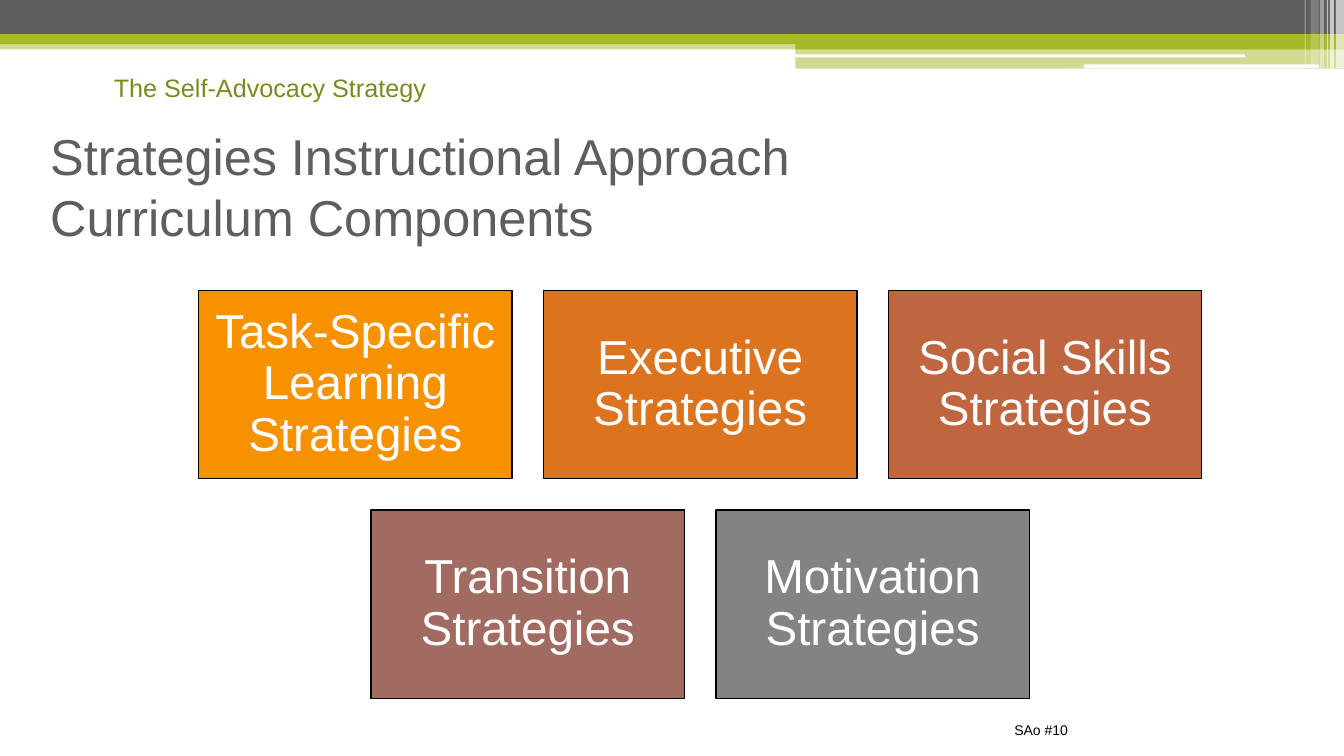
from dataclasses import dataclass

from lxml import etree
from pptx import Presentation
from pptx import util as u
from pptx.dml.color import RGBColor
from pptx.enum import shapes, text
from pptx.oxml.ns import qn

WIDE, HIGH = 13.33, 7.5


@dataclass(frozen=True)
class Theme:
    """Colours, type sizes and font of the deck."""
    font: str = "Arial"
    white: str = "FFFFFF"
    black: str = "000000"
    gray: str = "5E5E5E"
    lime: str = "A6B727"
    olive: str = "7D891D"
    cards: tuple = ("F69200", "DB731F", "BF6540", "A16B62", "838383")
    tag: int = 18
    title: int = 36
    card: int = 34
    note: int = 10


T = Theme()
FORM = shapes.MSO_SHAPE
ALIGN = text.PP_ALIGN
ANCHOR = text.MSO_ANCHOR


def place(box):
    """Turn a box in percent of the slide into lengths."""
    x, y, w, h = box
    return [u.Inches(v * side / 100)
            for v, side in ((x, WIDE), (y, HIGH), (w, WIDE), (h, HIGH))]


def inner(box, part):
    """Shift a part by the corner of the box that holds it."""
    return box[0] + part[0], box[1] + part[1], part[2], part[3]


def block(slide, box, fill, alpha=100, form=FORM.RECTANGLE, edge=None):
    """Draw a filled shape, with an optional edge and transparency."""
    shape = slide.shapes.add_shape(form, *place(box))
    shape.shadow.inherit = False
    shape.fill.solid()
    shape.fill.fore_color.rgb = RGBColor.from_string(fill)
    if alpha < 100:
        color = shape.fill._xPr.find(qn("a:solidFill"))[0]
        etree.SubElement(color, qn("a:alpha"), val=str(alpha * 1000))
    if edge:
        shape.line.color.rgb = RGBColor.from_string(edge)
        shape.line.width = u.Pt(1)
    else:
        shape.line.fill.background()
    return shape


def write(shape, words, size, color, align=ALIGN.LEFT, anchor=ANCHOR.TOP,
          wrap=True, pad=None, lead=None):
    """Put formatted words into a shape."""
    frame = shape.text_frame
    frame.word_wrap = wrap
    frame.vertical_anchor = anchor
    if pad is not None:
        frame.margin_left = frame.margin_right = u.Inches(pad)
        frame.margin_top = frame.margin_bottom = u.Inches(pad)
    para = frame.paragraphs[0]
    para.text = words
    para.alignment = align
    if lead:
        para.line_spacing = lead
    for run in para.runs:
        run.font.name = T.font
        run.font.size = u.Pt(size)
        run.font.color.rgb = RGBColor.from_string(color)


def label(slide, box, words, size, color, **style):
    """Add a text box."""
    write(slide.shapes.add_textbox(*place(box)), words, size, color, **style)


def banner(slide, box):
    """Draw the striped band along the top."""
    w = box[2]
    mid = 59.18
    for part, fill, alpha in (
        ((0, 5.33, w, 1.2), T.lime, 50),
        ((0, 0, w, 4.53), T.gray, 100),
        ((0, 4.53, w, 1.33), T.lime, 100),
        ((mid, 5.2, w - mid, 1.33), T.lime, 100),
        ((mid, 6.4, w - mid, 2.67), T.lime, 50),
    ):
        block(slide, inner(box, part), fill, alpha)
    for part in ((59.1, 7.2, 33.53, 0.4), (80.65, 8.53, 17.48, 0.53)):
        block(slide, inner(box, part), T.white, form=FORM.ROUNDED_RECTANGLE)
    for x, wide, high, alpha in (
        (99.4, 0.6, 9.07, 65), (98.95, 0.3, 9.07, 65),
        (98.72, 0.1, 9.07, 60), (98.2, 0.3, 9.07, 40),
        (97.52, 0.6, 8.53, 20), (97.07, 0.1, 8.53, 30),
    ):
        block(slide, inner(box, (x, 0, wide, high)), T.white, alpha)


def heading(slide, box):
    """Write the strategy tag and the title."""
    label(slide, inner(box, (4.73, 0, 25, 5.33)), "The Self-Advocacy Strategy",
          T.tag, T.olive, wrap=False)
    label(slide, inner(box, (0, 7.87, box[2], 15.6)),
          "Strategies Instructional Approach\nCurriculum Components",
          T.title, T.gray, anchor=ANCHOR.MIDDLE)


def cards(slide, box, rows, gap):
    """Fill the box with centred rows of cards."""
    most = max(len(row) for row in rows)
    wide = (box[2] - gap[0] * (most - 1)) / most
    high = (box[3] - gap[1] * (len(rows) - 1)) / len(rows)
    fills = iter(T.cards)
    for r, row in enumerate(rows):
        start = (most - len(row)) * (wide + gap[0]) / 2
        for c, words in enumerate(row):
            part = (start + c * (wide + gap[0]), r * (high + gap[1]),
                    wide, high)
            shape = block(slide, inner(box, part), next(fills), edge=T.black)
            write(shape, words, T.card, T.white, align=ALIGN.CENTER,
                  anchor=ANCHOR.MIDDLE, pad=0.14, lead=0.9)


def main():
    """Build and save the slide."""
    deck = Presentation()
    deck.slide_width, deck.slide_height = u.Inches(WIDE), u.Inches(HIGH)
    slide = deck.slides.add_slide(deck.slide_layouts[6])
    banner(slide, (0, 0, 100, 9.07))
    heading(slide, (3, 8.93, 90, 23.47))
    cards(slide, (14.78, 38.4, 74.64, 54), (
        ("Task-Specific Learning Strategies", "Executive Strategies",
         "Social Skills Strategies"),
        ("Transition Strategies", "Motivation Strategies"),
    ), gap=(2.33, 4.13))
    label(slide, (73.74, 94.8, 6.45, 4.27), "SAo #10", T.note, T.black,
          align=ALIGN.RIGHT)
    deck.save("out.pptx")


if __name__ == "__main__":
    main()
